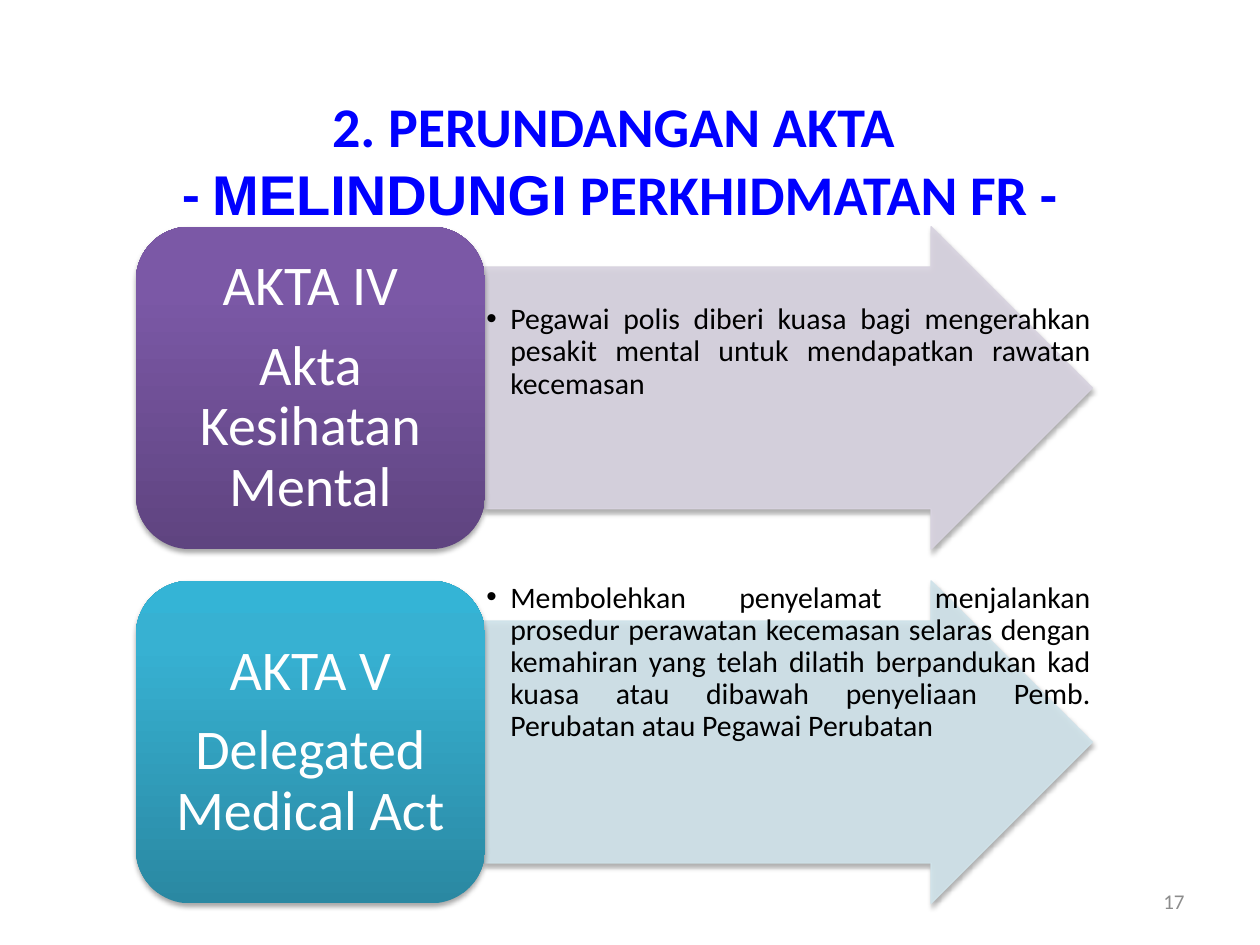
from dataclasses import dataclass
from lxml.etree import SubElement
from pptx import Presentation
from pptx.dml.color import RGBColor
from pptx.enum.shapes import MSO_SHAPE as Preset
from pptx.enum.text import MSO_ANCHOR as Anchor, PP_ALIGN as Align
from pptx.oxml import parse_xml
from pptx.oxml.ns import nsdecls, qn
from pptx.util import Cm, Pt


@dataclass(frozen=True)
class Theme:
    """Colours, fonts and type sizes of the slide."""
    font: str = "Calibri"
    accent_font: str = "Arial"
    title: str = "0000FF"
    body: str = "000000"
    label: str = "FFFFFF"
    number: str = "8C8C8C"
    heading_size: int = 32
    body_size: int = 17
    number_size: int = 12


THEME = Theme()
ACTS = [
    (["AKTA IV", "Akta Kesihatan Mental"],
     "Pegawai polis diberi kuasa bagi mengerahkan pesakit mental untuk "
     "mendapatkan rawatan kecemasan",
     1.53, "D8D3E0", [(0, "5F4480"), (80, "7B58A6"), (100, "7C57A8")]),
    (["AKTA V", "Delegated Medical Act"],
     "Membolehkan penyelamat menjalankan prosedur perawatan kecemasan selaras "
     "dengan kemahiran yang telah dilatih berpandukan kad kuasa atau dibawah "
     "penyeliaan Pemb. Perubatan atau Pegawai Perubatan",
     0, "D0E3EA", [(0, "2A88A2"), (80, "37B1D2"), (100, "34B4D6")]),
]


def style(font, size, colour, bold=False, name=THEME.font):
    """Apply typeface, size, colour and weight to a font."""
    font.name, font.size, font.bold = name, Pt(size), bold
    font.color.rgb = RGBColor.from_string(colour)


def set_margins(frame, left, top):
    """Set equal side margins and equal vertical margins in centimetres."""
    frame.margin_left = frame.margin_right = Cm(left)
    frame.margin_top = frame.margin_bottom = Cm(top)


def add_text_frame(slide, left, top, width, height):
    """Add a wrapping text box and return its frame."""
    box = slide.shapes.add_textbox(Cm(left), Cm(top), Cm(width), Cm(height))
    box.text_frame.word_wrap = True
    return box.text_frame


def add_shadowed(slide, preset, left, top, width, height):
    """Add a preset shape with a soft shadow below it."""
    shape = slide.shapes.add_shape(preset, Cm(left), Cm(top), Cm(width), Cm(height))
    shape.shadow.inherit = False
    effects = shape._element.spPr.find(qn("a:effectLst"))
    effects.append(parse_xml(
        f'<a:outerShdw {nsdecls("a")} blurRad="{Pt(3.1)}" dist="{Pt(1.8)}" '
        'dir="5400000" rotWithShape="0"><a:srgbClr val="000000">'
        '<a:alpha val="35000"/></a:srgbClr></a:outerShdw>'))
    return shape


def add_title(slide, left, top, width, height):
    """Place the two centred title lines."""
    frame = add_text_frame(slide, left, top, width, height)
    lines = [["2. PERUNDANGAN AKTA "], ["- ", "MELINDUNGI", " PERKHIDMATAN FR -"]]
    for index, pieces in enumerate(lines):
        line = frame.add_paragraph() if index else frame.paragraphs[0]
        line.alignment = Align.CENTER
        for piece in pieces:
            run = line.add_run()
            run.text = piece
            face = THEME.accent_font if piece == "MELINDUNGI" else THEME.font
            style(run.font, THEME.heading_size, THEME.title, True, face)


def add_arrow(slide, left, top, width, height, tint, detail, drop):
    """Place a pale arrow with its bulleted explanation."""
    arrow = add_shadowed(slide, Preset.RIGHT_ARROW, left, top, width, height)
    arrow.adjustments[0], arrow.adjustments[1] = 0.75, 0.5
    arrow.line.width = Pt(0.75)
    for fill in (arrow.fill, arrow.line.fill):
        fill.solid()
        fill.fore_color.rgb = RGBColor.from_string(tint)
    for colour in arrow._element.spPr.findall(".//" + qn("a:solidFill") + "/*"):
        SubElement(colour, qn("a:alpha"), val="90000")

    frame = add_text_frame(slide, left, top, width, height)
    set_margins(frame, 0.03, 0.03)
    frame.margin_top = Cm(0.03 + drop)
    explanation = frame.paragraphs[0]
    explanation.text = detail
    explanation.alignment = Align.JUSTIFY
    explanation.line_spacing = 0.9
    properties = explanation._p.get_or_add_pPr()
    properties.set("marL", str(Cm(0.48)))
    properties.set("indent", str(Cm(-0.48)))
    SubElement(properties, qn("a:buFont"), typeface=THEME.accent_font)
    SubElement(properties, qn("a:buChar"), char="•")
    style(explanation.runs[0].font, THEME.body_size, THEME.body)


def add_label(slide, left, top, width, height, stops, lines):
    """Place the rounded gradient block that names the act."""
    block = add_shadowed(slide, Preset.ROUNDED_RECTANGLE, left, top, width, height)
    block.line.fill.background()
    block.fill.gradient()
    block.fill.gradient_angle = 90
    stop_list = block._element.spPr.find(".//" + qn("a:gsLst"))
    stop_list.clear()
    for position, colour in stops:
        stop = SubElement(stop_list, qn("a:gs"), pos=str(position * 1000))
        SubElement(stop, qn("a:srgbClr"), val=colour)

    frame = block.text_frame
    frame.word_wrap = True
    frame.vertical_anchor = Anchor.MIDDLE
    set_margins(frame, 0, 0)
    frame.text = "\n".join(lines)
    for line in frame.paragraphs:
        line.alignment = Align.CENTER
        line.line_spacing = 0.9
        line.space_after = Pt(11)
        style(line.runs[0].font, THEME.heading_size, THEME.label)


def add_act(slide, left, top, width, height, act):
    """Place one act: its label and the arrow beside it."""
    lines, detail, drop, tint, stops = act
    label_width = width * 0.365
    add_arrow(slide, left + label_width, top, width - label_width, height,
              tint, detail, drop)
    add_label(slide, left, top, label_width, height, stops, lines)


def add_page_number(slide, left, top, width, height):
    """Place the page number in the lower right corner."""
    frame = add_text_frame(slide, left, top, width, height)
    frame.vertical_anchor = Anchor.MIDDLE
    frame.text = "17"
    number = frame.paragraphs[0]
    number.alignment = Align.RIGHT
    style(number.runs[0].font, THEME.number_size, THEME.number)


def main():
    """Build the slide and save it."""
    deck = Presentation()
    deck.slide_width, deck.slide_height = Cm(25.4), Cm(19.05)
    slide = deck.slides.add_slide(deck.slide_layouts[6])
    add_title(slide, 0, 1.73, 25, 3)
    for row, act in enumerate(ACTS):
        add_act(slide, 2.74, 4.57 + row * 7.14, 19.28, 6.5, act)
    add_page_number(slide, 18.2, 17.65, 5.93, 1.02)
    deck.save("out.pptx")


if __name__ == "__main__":
    main()
